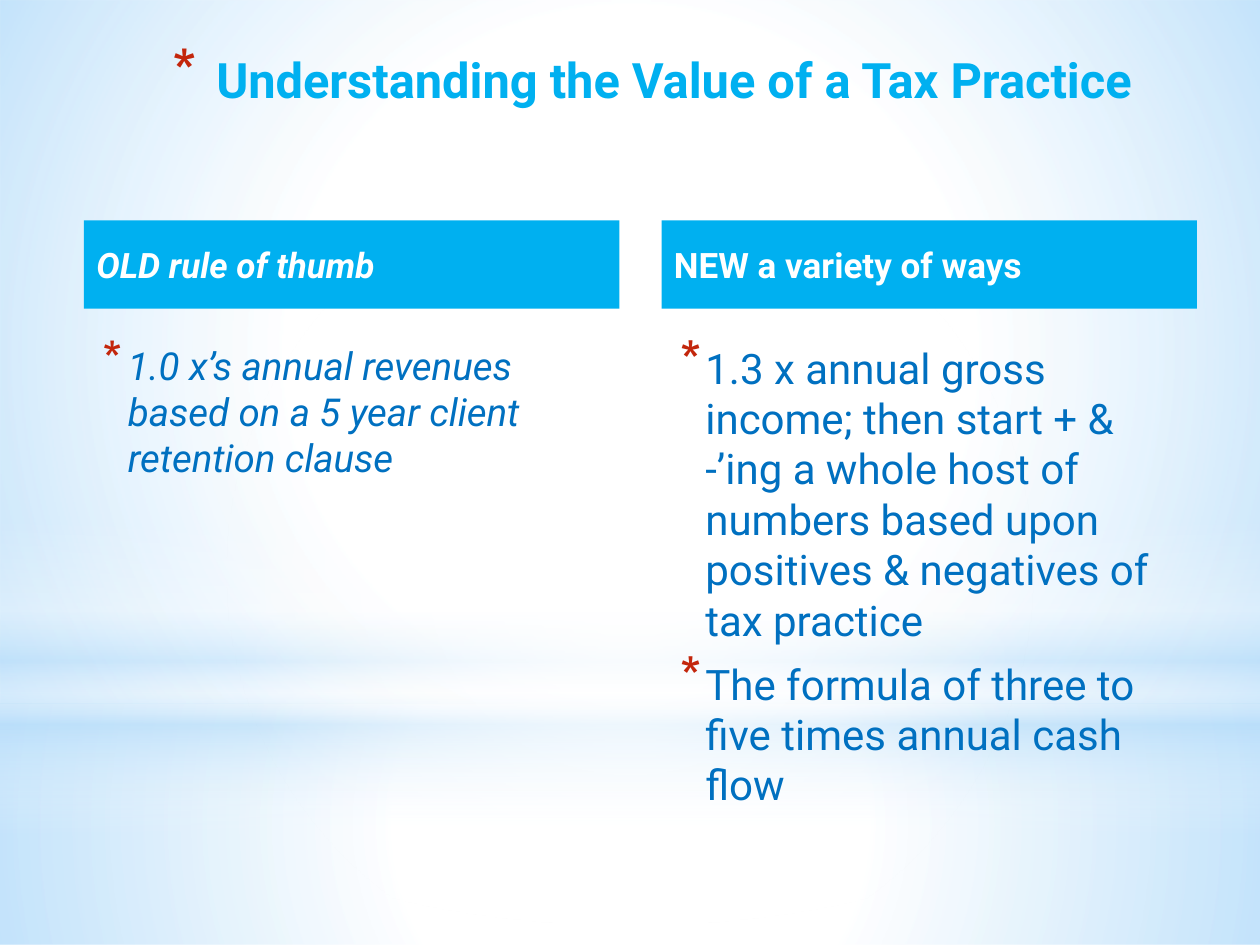
from lxml import etree
from pptx import Presentation
from pptx.dml.color import RGBColor
from pptx.enum.shapes import MSO_SHAPE
from pptx.enum.text import MSO_ANCHOR, PP_ALIGN
from pptx.oxml.ns import qn
from pptx.util import Pt

RECTANGLE, OVAL = MSO_SHAPE.RECTANGLE, MSO_SHAPE.OVAL
TOP, MIDDLE = MSO_ANCHOR.TOP, MSO_ANCHOR.MIDDLE
LEFT, RIGHT = PP_ALIGN.LEFT, PP_ALIGN.RIGHT

FONT = "Roboto"
COLORS = {
    "white": "FFFFFF",
    "haze": "B4DCFA",
    "accent": "00B0F0",
    "body": "0070C0",
    "bullet": "C3260C",
}
PAGE_WIDTH, PAGE_HEIGHT = 720, 540
COLUMN_WIDTH = 306
COLUMN_LEFTS = (48, 378)


def add_node(parent, tag, **attributes):
    node = etree.SubElement(parent, qn(tag))
    for name, value in attributes.items():
        node.set(name, str(value))
    return node


def add_plain_shape(page, kind, left, top, width, height):
    shape = page.shapes.add_shape(kind, Pt(left), Pt(top), Pt(width), Pt(height))
    shape.shadow.inherit = False
    shape.line.fill.background()
    return shape


def add_glow(page, kind, top, height, stops, angle=None):
    """Full-width shape with a see-through gradient, round unless angled."""
    shape = add_plain_shape(page, kind, 0, top, PAGE_WIDTH, height)
    shape.fill.background()
    properties = shape.element.spPr
    gradient = etree.Element(qn("a:gradFill"), rotWithShape="1")
    stop_list = add_node(gradient, "a:gsLst")
    for position, color, opacity in stops:
        stop = add_node(stop_list, "a:gs", pos=position * 1000)
        tint = add_node(stop, "a:srgbClr", val=COLORS[color])
        add_node(tint, "a:alpha", val=opacity * 1000)
    if angle is None:
        way = add_node(gradient, "a:path", path="circle")
        add_node(way, "a:fillToRect", l=50000, t=50000, r=50000, b=50000)
    else:
        add_node(gradient, "a:lin", ang=angle * 60000, scaled=0)
    properties.replace(properties.find(qn("a:noFill")), gradient)


def add_bullet(para, percent, margin, hanging):
    properties = para._p.get_or_add_pPr()
    properties.set("marL", str(Pt(margin)))
    properties.set("indent", str(-Pt(hanging)))
    color = add_node(properties, "a:buClr")
    add_node(color, "a:srgbClr", val=COLORS["bullet"])
    add_node(properties, "a:buSzPct", val=percent * 1000)
    add_node(properties, "a:buChar", char="*")


def write(para, text, size, color, bold=False, italic=False, align=LEFT):
    para.alignment = align
    span = para.add_run()
    span.text = text
    span.font.name = FONT
    span.font.size = Pt(size)
    span.font.bold = bold
    span.font.italic = italic
    span.font.color.rgb = RGBColor.from_string(COLORS[color])


def add_text_frame(page, left, top, width, height):
    box = page.shapes.add_textbox(Pt(left), Pt(top), Pt(width), Pt(height))
    frame = box.text_frame
    frame.word_wrap = True
    frame.vertical_anchor = TOP
    return frame


def add_title(page, text):
    frame = add_text_frame(page, 42, 21.6, 612, 86.4)
    frame.margin_top = Pt(7)
    para = frame.paragraphs[0]
    write(para, text, 27.9, "accent", bold=True, align=RIGHT)
    add_bullet(para, 128, margin=25.2, hanging=25.2)


def add_heading(page, left, text, italic):
    shape = add_plain_shape(page, RECTANGLE, left, 126, COLUMN_WIDTH, 50.4)
    shape.fill.solid()
    shape.fill.fore_color.rgb = RGBColor.from_string(COLORS["accent"])
    frame = shape.text_frame
    frame.word_wrap = True
    frame.vertical_anchor = MIDDLE
    write(frame.paragraphs[0], text, 20, "white", bold=True, italic=italic)


def add_points(page, left, points, size, italic):
    frame = add_text_frame(page, left, 192, COLUMN_WIDTH, 282)
    for index, point in enumerate(points):
        para = frame.add_paragraph() if index else frame.paragraphs[0]
        para.space_before = Pt(size * 0.2 if index else 0)
        para.space_after = Pt(3)
        write(para, point, size, "body", italic=italic)
        add_bullet(para, 130, margin=18, hanging=14.4)


def add_background(page):
    horizon = 402
    add_glow(page, RECTANGLE, horizon, PAGE_HEIGHT - horizon,
             [(0, "white", 91), (37, "white", 76), (100, "haze", 79)])
    add_glow(page, RECTANGLE, 0, horizon,
             [(0, "white", 89), (48, "white", 62), (100, "haze", 79)])
    add_glow(page, RECTANGLE, 296.6, 180,
             [(0, "white", 0), (29, "white", 30), (45, "haze", 40),
              (55, "white", 26), (65, "haze", 60), (100, "white", 0)], angle=90)
    add_glow(page, OVAL, 126, horizon, [(0, "white", 100), (56, "white", 0)])


def main():
    deck = Presentation()
    deck.slide_width, deck.slide_height = Pt(PAGE_WIDTH), Pt(PAGE_HEIGHT)
    page = deck.slides.add_slide(deck.slide_layouts[6])

    # Soft blue backdrop
    add_background(page)

    # Title
    add_title(page, "Understanding the Value of a Tax Practice")

    # Two columns: heading, points, text size, italic
    columns = [
        ("OLD rule of thumb",
         ["1.0 x’s annual revenues based on a 5 year client retention clause"],
         22, True),
        ("NEW a variety of ways",
         ["1.3 x annual gross income; then start + & -’ing a whole host of "
          "numbers based upon positives & negatives of tax practice",
          "The formula of three to five times annual cash flow"],
         24, False),
    ]
    for left, (heading, points, size, italic) in zip(COLUMN_LEFTS, columns):
        add_points(page, left, points, size, italic)
        add_heading(page, left, heading, italic)

    deck.save("out.pptx")


if __name__ == "__main__":
    main()
